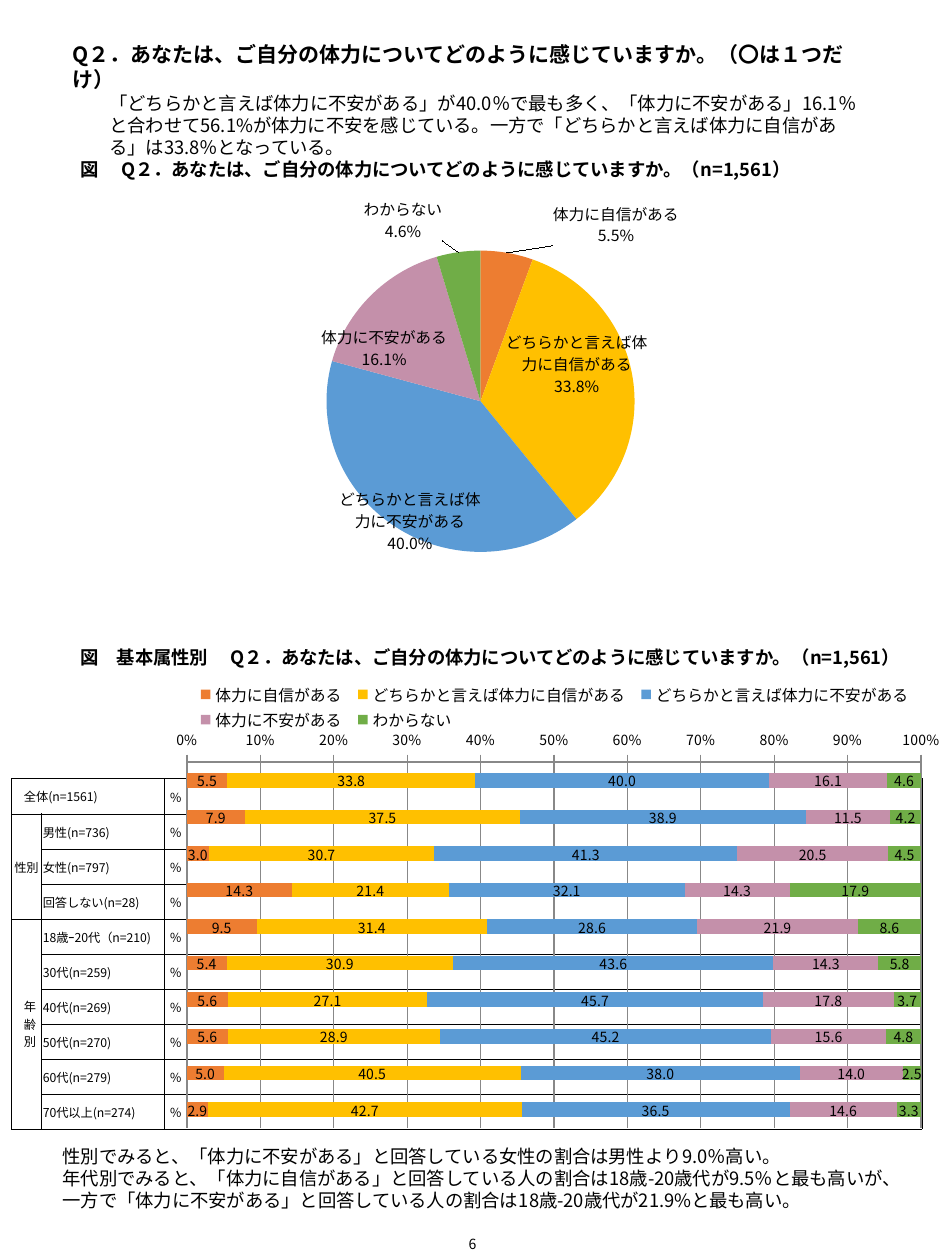
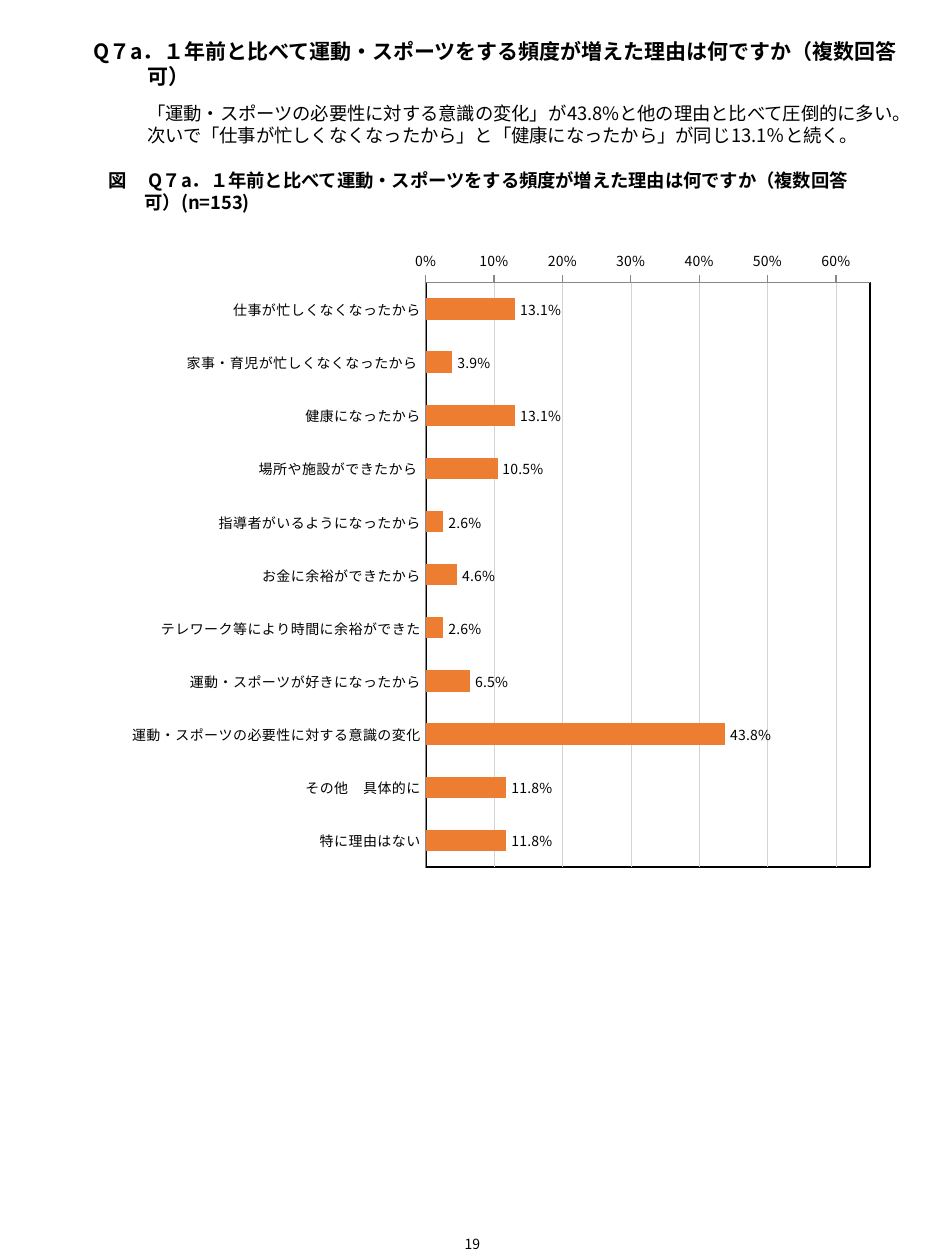
"""Build two survey report pages: a fitness self-rating and the reasons for exercising more."""
from lxml import etree
from pptx import Presentation, util as u
from pptx.chart.data import CategoryChartData
from pptx.dml.color import RGBColor
from pptx.enum import chart as charts, text
from pptx.oxml.ns import qn

FONT = "Noto Sans CJK JP"
COLORS = {
    "text": "000000", "axis": "888888", "grid": "D3D3D3",
    "confident": "ED7D31", "rather_confident": "FFC000",
    "rather_anxious": "5B9BD5", "anxious": "C490AA", "unknown": "70AD47",
}
RGB = {name: RGBColor.from_string(value) for name, value in COLORS.items()}
ANSWER_COLORS = [RGB[name] for name in
                 ("confident", "rather_confident", "rather_anxious", "anxious", "unknown")]


def write(frame, words, size=10.5, bold=False, align=None, left=0, first=0, before=0):
    """Put one formatted paragraph into a text frame."""
    paragraph = frame.add_paragraph() if frame.text else frame.paragraphs[0]
    properties = paragraph._p.get_or_add_pPr()
    properties.set("marL", str(u.Inches(left)))
    properties.set("indent", str(u.Inches(first)))
    paragraph.alignment = align
    paragraph.space_before = u.Pt(before)
    run = paragraph.add_run()
    run.text = words
    run.font.name, run.font.size, run.font.bold = FONT, u.Pt(size), bold
    run.font.color.rgb = RGB["text"]


def place(parent, index, mode=None, **shares):
    """Give a chart part a manual layout in shares of the chart."""
    for old in parent.findall(qn("c:layout")):
        parent.remove(old)
    layout = etree.Element(qn("c:layout"))
    manual = etree.SubElement(layout, qn("c:manualLayout"))
    if mode:
        if mode == "inner":
            etree.SubElement(manual, qn("c:layoutTarget"), val="inner")
        for axis in "xy":
            etree.SubElement(manual, qn(f"c:{axis}Mode"), val="edge")
    for name, share in shares.items():
        etree.SubElement(manual, qn(f"c:{name}"), val=str(share))
    parent.insert(index, layout)


presentation = Presentation()
presentation.slide_width, presentation.slide_height = u.Inches(7.5), u.Inches(10)
column, row = presentation.slide_width / 100, presentation.slide_height / 100
fitness, reasons = [presentation.slides.add_slide(presentation.slide_layouts[6]) for _ in range(2)]

title = {"size": 12, "bold": True}
caption = {"bold": True}
number = {"size": 8, "align": text.PP_ALIGN.CENTER}
top, middle = text.MSO_ANCHOR.TOP, text.MSO_ANCHOR.MIDDLE
page_number = (47.5, 97.6, 5, 2.4)

text_boxes = [
    (fitness, (6.4, 2.8, 87.2, 6.6), top, [
        ("Q２．あなたは、ご自分の体力についてどのように感じていますか。（〇は１つだけ）", title),
        ("「どちらかと言えば体力に不安がある」が40.0％で最も多く、「体力に不安がある」16.1％と合わせて"
         "56.1%が体力に不安を感じている。一方で「どちらかと言えば体力に自信がある」は33.8％となっている。",
         {"left": 0.29})]),
    (fitness, (5.33, 90.4, 92.27, 6.3), top, [
        ("性別でみると、「体力に不安がある」と回答している女性の割合は男性より9.0％高い。", {}),
        ("年代別でみると、「体力に自信がある」と回答している人の割合は18歳-20歳代が9.5％と最も高いが、"
         "一方で「体力に不安がある」と回答している人の割合は18歳-20歳代が21.9%と最も高い。", {})]),
    (fitness, (7.2, 50.8, 91.2, 2.9), top, [
        ("図　基本属性別　 Q２．あなたは、ご自分の体力についてどのように感じていますか。（n=1,561）", caption)]),
    (fitness, (7.2, 12.1, 91.2, 2.8), top, [
        ("図　 Q２．あなたは、ご自分の体力についてどのように感じていますか。（n=1,561）", caption)]),
    (fitness, page_number, top, [("6", number)]),
    (reasons, (6.4, 3.5, 92.67, 7.6), middle, [
        ("Q７a．１年前と比べて運動・スポーツをする頻度が増えた理由は何ですか（複数回答可）",
         {**title, "left": 0.59, "first": -0.43}),
        ("「運動・スポーツの必要性に対する意識の変化」が43.8%と他の理由と比べて圧倒的に多い。",
         {"left": 0.59, "before": 7.5}),
        ("次いで「仕事が忙しくなくなったから」と「健康になったから」が同じ13.1％と続く。", {"left": 0.59})]),
    (reasons, (10.13, 12.9, 84.53, 4.5), top, [
        ("図　 Q７a．１年前と比べて運動・スポーツをする頻度が増えた理由は何ですか（複数回答可）(n=153)",
         {**caption, "left": 0.29, "first": -0.29})]),
    (reasons, page_number, top, [("19", number)]),
]
for slide, area, anchor, paragraphs in text_boxes:
    x, y, width, height = area
    shape = slide.shapes.add_textbox(
        round(x * column), round(y * row), round(width * column), round(height * row))
    frame = shape.text_frame
    frame.word_wrap = area != page_number
    frame.vertical_anchor = anchor
    for words, style in paragraphs:
        write(frame, words, **style)

groups = ["全体(n=1561)", "男性(n=736)", "女性(n=797)", "回答しない(n=28)", "18歳ｰ20代（n=210)",
          "30代(n=259)", "40代(n=269)", "50代(n=270)", "60代(n=279)", "70代以上(n=274)"]
row_heads = {0: groups[0], 1: "性別", 4: "年齢別"}
table = fitness.shapes.add_table(len(groups), 4, round(1.2 * column), round(61.8 * row),
                                 round(96.27 * column), round(27.8 * row)).table
table.first_row = table.horz_banding = False
for table_column, width in zip(table.columns, (0.22, 0.97, 0.19, 5.83)):
    table_column.width = u.Inches(width)
table.cell(0, 0).merge(table.cell(0, 1))
table.cell(1, 0).merge(table.cell(3, 0))
table.cell(4, 0).merge(table.cell(9, 0))

for r, group in enumerate(groups):
    table.rows[r].height = round(2.78 * row)
    for c, words in enumerate((row_heads.get(r, ""), group if r else "", "％", "")):
        cell = table.cell(r, c)
        roomy = c == 0 and r in (0, 4)
        cell.margin_left = cell.margin_right = u.Inches(0.1 if roomy else 0.01)
        cell.margin_top = u.Inches(0.05 if roomy else 0.01)
        cell.margin_bottom = u.Inches(0.05 if roomy else 0)
        cell.vertical_anchor = middle
        if words:
            centred = c == 2 or c == 0 and r > 0
            write(cell.text_frame, words, size=7,
                  align=text.PP_ALIGN.CENTER if centred else text.PP_ALIGN.LEFT)
        else:
            etree.SubElement(cell.text_frame.paragraphs[0]._p, qn("a:endParaRPr"), sz="700")
        properties = cell._tc.get_or_add_tcPr()
        if c == 0 and r > 0:
            properties.set("vert", "eaVert")
        for side in "LRTB":
            line = etree.SubElement(properties, qn(f"a:ln{side}"), w=str(u.Pt(0.25)))
            if (c, side) in ((2, "R"), (3, "L")):
                etree.SubElement(line, qn("a:noFill"))
            else:
                fill = etree.SubElement(line, qn("a:solidFill"))
                etree.SubElement(fill, qn("a:srgbClr"), val=COLORS["text"])
        cell.fill.background()

answers = ["体力に自信がある", "どちらかと言えば体力に自信がある", "どちらかと言えば体力に不安がある",
           "体力に不安がある", "わからない"]
answer_shares = [
    [5.5, 7.9, 3, 14.3, 9.5, 5.4, 5.6, 5.6, 5, 2.9],
    [33.8, 37.5, 30.7, 21.4, 31.4, 30.9, 27.1, 28.9, 40.5, 42.7],
    [40, 38.9, 41.3, 32.1, 28.6, 43.6, 45.7, 45.2, 38, 36.5],
    [16.1, 11.5, 20.5, 14.3, 21.9, 14.3, 17.8, 15.6, 14, 14.6],
    [4.6, 4.2, 4.5, 17.9, 8.6, 5.8, 3.7, 4.8, 2.5, 3.3],
]
reason_shares = {
    "仕事が忙しくなくなったから": 13.1, "家事・育児が忙しくなくなったから ": 3.9, "健康になったから": 13.1,
    "場所や施設ができたから ": 10.5, "指導者がいるようになったから": 2.6, "お金に余裕ができたから": 4.6,
    "テレワーク等により時間に余裕ができた": 2.6, "運動・スポーツが好きになったから": 6.5,
    "運動・スポーツの必要性に対する意識の変化": 43.8, "その他　具体的に": 11.8, "特に理由はない": 11.8,
}
kinds, positions = charts.XL_CHART_TYPE, charts.XL_LABEL_POSITION
percent = '0.0"%"'
chart_plans = [
    (fitness, kinds.PIE, (10.67, 14, 78.8, 33.5), (0.25, 0.18, 0.52, 0.73), 9, percent,
     answers, {"Series 1": [shares[0] for shares in answer_shares]}, positions.OUTSIDE_END),
    (fitness, kinds.BAR_STACKED_100, (16.67, 53.6, 84, 38.7), (0.037, 0.178, 0.925, 0.75), 8, "0.0",
     [str(i + 1) for i in range(len(groups))], dict(zip(answers, answer_shares)), positions.CENTER),
    (reasons, kinds.BAR_CLUSTERED, (-28, 19.8, 122.8, 49.9), (0.595, 0.039, 0.383, 0.943), 8, percent,
     list(reason_shares), {"Series 1": list(reason_shares.values())}, positions.OUTSIDE_END),
]
built = []
for slide, kind, (x, y, width, height), plot_area, size, pattern, categories, series, position in chart_plans:
    data = CategoryChartData(number_format=pattern)
    data.categories = categories
    for name, values in series.items():
        data.add_series(name, values)
    chart = slide.shapes.add_chart(kind, round(x * column), round(y * row), round(width * column),
                                   round(height * row), data).chart
    chart.has_title = chart.has_legend = False
    chart.font.name, chart.font.size, chart.font.color.rgb = FONT, u.Pt(size), RGB["text"]
    plot = chart.plots[0]
    plot.vary_by_categories = kind == kinds.PIE
    plot.has_data_labels = True
    labels = plot.data_labels
    labels.show_value = True
    labels.show_category_name = kind == kinds.PIE
    labels.number_format, labels.number_format_is_linked = pattern, False
    labels.position = position
    labels.font.name, labels.font.size, labels.font.color.rgb = FONT, u.Pt(size), RGB["text"]
    place(chart._chartSpace.chart.plotArea, 0, "inner", **dict(zip("xywh", plot_area)))
    if kind != kinds.PIE:
        plot.gap_width = 150
        for one_series, color in zip(plot.series, ANSWER_COLORS):
            one_series.format.fill.solid()
            one_series.format.fill.fore_color.rgb = color
        chart.category_axis.reverse_order = True
        chart.category_axis.major_tick_mark = charts.XL_TICK_MARK.NONE
        axis = chart.value_axis
        axis.major_tick_mark = charts.XL_TICK_MARK.OUTSIDE
        axis.has_major_gridlines = True
        for line in (axis.format.line, chart.category_axis.format.line, axis.major_gridlines.format.line):
            line.color.rgb, line.width = RGB["axis"], u.Pt(0.75)
    built.append(chart)
pie, group_bars, reason_bars = built

label_offsets = [(0.06, 0), (-0.18, 0.05), (0.12, -0.11), (0.11, 0.19), (-0.02, -0.01)]
pie_series = pie.plots[0].series[0]
for i, (x, y) in enumerate(label_offsets):
    point = pie_series.points[i]
    point.format.fill.solid()
    point.format.fill.fore_color.rgb = ANSWER_COLORS[i]
    label = point.data_label
    label.font.name, label.font.size, label.font.color.rgb = FONT, u.Pt(9), RGB["text"]
    label.position = positions.OUTSIDE_END
    element = pie_series._element.findall(".//" + qn("c:dLbl"))[i]
    element.find(qn("c:showCatName")).set("val", "1")
    etree.SubElement(element, qn("c:separator")).text = "\n"
    place(element, 1, x=x, y=y)

group_bars.plots[0].overlap = 100
group_bars.category_axis.visible = False
group_bars.value_axis.tick_labels.number_format = "0%"
group_bars.value_axis.tick_labels.number_format_is_linked = False
group_bars.has_legend = True
legend = group_bars.legend
legend.position, legend.include_in_layout = charts.XL_LEGEND_POSITION.TOP, False
legend.font.name, legend.font.size, legend.font.color.rgb = FONT, u.Pt(9), RGB["text"]
place(legend._element, 1, "edge", x=0.04, y=0.01, w=0.92, h=0.11)

reason_bars.plots[0].overlap = -25
axis = reason_bars.value_axis
axis.minimum_scale, axis.maximum_scale, axis.major_unit = 0, 65, 10
axis.tick_labels.number_format, axis.tick_labels.number_format_is_linked = '0"%"', False
axis.major_gridlines.format.line.color.rgb = RGB["grid"]
axis.major_gridlines.format.line.width = u.Pt(0.25)
frame_style = etree.SubElement(reason_bars._chartSpace.chart.plotArea, qn("c:spPr"))
etree.SubElement(frame_style, qn("a:noFill"))
frame_line = etree.SubElement(frame_style, qn("a:ln"), w=str(u.Pt(1)))
frame_fill = etree.SubElement(frame_line, qn("a:solidFill"))
etree.SubElement(frame_fill, qn("a:srgbClr"), val=COLORS["text"])

for root in [fitness._element, reasons._element] + [chart._chartSpace for chart in built]:
    for latin in list(root.iter(qn("a:latin"))):
        east_asian = etree.Element(qn("a:ea"), typeface=FONT)
        latin.addnext(east_asian)

presentation.save("out.pptx")
